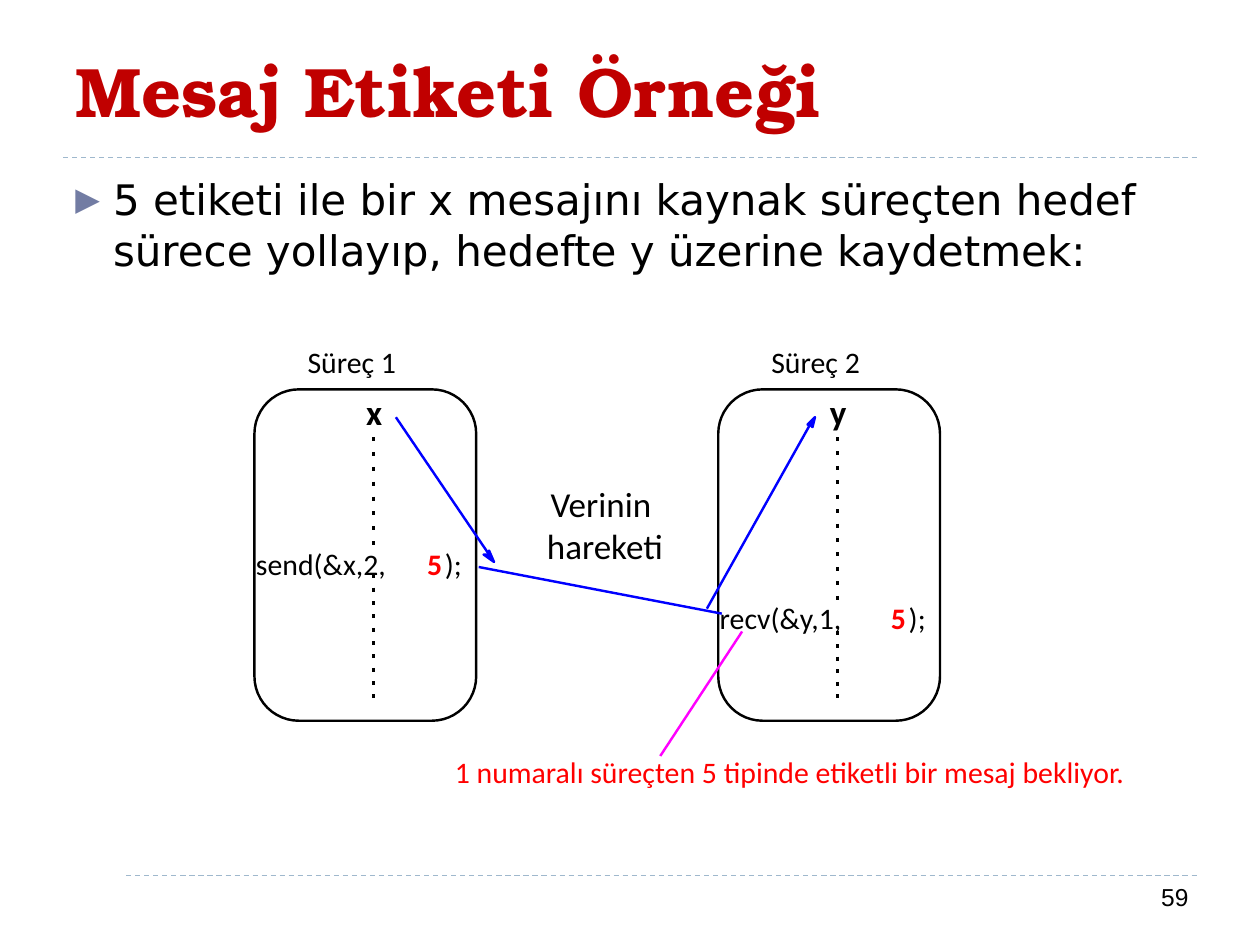
import pptx
import pptx.dml.color
import pptx.enum.dml
import pptx.enum.shapes
import pptx.enum.text
import pptx.oxml
import pptx.oxml.ns
import pptx.util

Cm = pptx.util.Cm
Align = pptx.enum.text.PP_ALIGN
Anchor = pptx.enum.text.MSO_ANCHOR
Shape = pptx.enum.shapes.MSO_SHAPE
BLACK, WHITE, RED, BLUE = "000000", "FFFFFF", "FF0000", "0000FF"
MAGENTA, CRIMSON, RULE, BULLET = "FF00FF", "C00000", "9FB8CD", "727CA3"


def color(value):
    """Turn a hex string into a colour."""
    return pptx.dml.color.RGBColor.from_string(value)


def paint(fill, value):
    """Fill with a colour, or with nothing."""
    if value:
        fill.solid()
        fill.fore_color.rgb = color(value)
    else:
        fill.background()


class Sketch:
    """Hold the style and the current slide."""

    def __init__(self, page, font="Calibri", size=17, weight=1.38):
        """Keep the page and its default style."""
        self.page = page
        self.font = font
        self.size = size
        self.weight = weight

    def text(self, words, left, top, width, height, fill=None, margin=0, wrap=False,
             align=Align.LEFT, anchor=Anchor.TOP, tint=BLACK, **formats):
        """Add a text box and return its paragraph."""
        box = self.page.shapes.add_textbox(Cm(left), Cm(top), Cm(width), Cm(height))
        if fill:
            paint(box.fill, fill)
        frame = box.text_frame
        settings = {"word_wrap": wrap, "vertical_anchor": anchor}
        if margin is not None:
            settings.update({f"margin_{side}": Cm(margin) for side in ("left", "top", "right", "bottom")})
        for name, value in settings.items():
            setattr(frame, name, value)
        para = frame.paragraphs[0]
        para.alignment = align
        formats = {"name": self.font, "size": self.size, "bold": False, **formats}
        formats["size"] = pptx.util.Pt(formats["size"])
        for index, row in enumerate(words.splitlines()):
            if index:
                para.add_line_break()
            span = para.add_run()
            span.text = row
            span.font.color.rgb = color(tint)
            for name, value in formats.items():
                setattr(span.font, name, value)
        return para

    def bullet(self, para, indent, gap):
        """Give a paragraph a triangle bullet with a hanging indent."""
        para.space_before = pptx.util.Pt(gap)
        properties = para._p.get_or_add_pPr()
        properties.set("marL", str(Cm(indent)))
        properties.set("indent", str(-Cm(indent)))
        space = pptx.oxml.ns.nsdecls("a")
        for markup in (f'<a:buClr {space}><a:srgbClr val="{BULLET}"/></a:buClr>',
                       f'<a:buSzPct {space} val="76000"/>',
                       f'<a:buFont {space} typeface="DejaVu Sans"/>',
                       f'<a:buChar {space} char="▶"/>'):
            properties.append(pptx.oxml.parse_xml(markup))

    def line(self, start, end, tint=BLACK, weight=None, dash=None):
        """Add a straight connector."""
        points = [Cm(value) for value in (*start, *end)]
        kind = pptx.enum.shapes.MSO_CONNECTOR.STRAIGHT
        connector = self.page.shapes.add_connector(kind, *points)
        connector.line.color.rgb = color(tint)
        connector.line.width = pptx.util.Pt(weight or self.weight)
        if dash:
            connector.line.dash_style = dash
        effects = f'<a:effectLst {pptx.oxml.ns.nsdecls("a")}/>'
        connector._element.spPr.append(pptx.oxml.parse_xml(effects))

    def ticks(self, x, first, last, count, length=0.08):
        """Add a column of evenly spaced short strokes."""
        step = (last - first) / (count - 1)
        for index in range(count):
            top = first + index * step
            self.line((x, top), (x, top + length))

    def finish(self, shape, fill, outline):
        """Set fill and outline and drop the shadow."""
        shape.shadow.inherit = False
        paint(shape.fill, fill)
        paint(shape.line.fill, outline)
        if outline:
            shape.line.width = pptx.util.Pt(self.weight)

    def shape(self, kind, left, top, width, height, fill=None, outline=None, corner=None):
        """Add a preset shape."""
        item = self.page.shapes.add_shape(kind, Cm(left), Cm(top), Cm(width), Cm(height))
        if corner:
            item.adjustments[0] = corner
        self.finish(item, fill, outline)

    def arrow(self, start, head):
        """Add a shaft that ends in a drawn arrowhead."""
        self.line(start, head[0], BLUE)
        points = [(Cm(x), Cm(y)) for x, y in head]
        builder = self.page.shapes.build_freeform(*points[0])
        builder.add_line_segments(points[1:], close=True)
        self.finish(builder.convert_to_shape(), BLUE, BLUE)

    def process(self, left, title, variable, call, call_top, columns):
        """Add one process with its variable, call and dotted column."""
        self.text(title, left + 1.07, 6.93, 2.08, 0.74)
        self.text(call, left + 0.03, call_top, 2.8, 0.72)
        self.text("5", left + 3.48, call_top, 0.33, 0.74, tint=RED, bold=True)
        self.text(");", left + 3.84, call_top, 0.36, 0.72)
        for column in columns:
            self.ticks(left + 2.4, *column)
        self.shape(Shape.ROUNDED_RECTANGLE, left, 7.85, 4.47, 6.68, outline=BLACK, corner=0.2)
        self.text(variable, left + 2.25, 7.87, 0.38, 0.84, size=20, bold=True)


def main():
    """Build the slide and save it."""
    deck = pptx.Presentation()
    deck.slide_width, deck.slide_height = Cm(25.4), Cm(19.05)
    sketch = Sketch(deck.slides.add_slide(deck.slide_layouts[6]))

    for y in (17.65, 3.18):
        sketch.line((1.27, y), (24.13, y), RULE, 0.75, pptx.enum.dml.MSO_LINE.DASH)
    sketch.shape(Shape.RECTANGLE, 0.89, 17.32, 1.6, 1.6, fill=WHITE)
    sketch.text("Mesaj Etiketi Örneği", 1.27, 0.43, 22.86, 2.74, margin=None, wrap=True,
                anchor=Anchor.MIDDLE, tint=CRIMSON, name="TeX Gyre Bonum", size=40, bold=True)
    sketch.text("59", 18.29, 17.65, 5.92, 1.02, margin=None, wrap=True,
                align=Align.RIGHT, name="Arial", size=14)
    body = sketch.text("5 etiketi ile bir x mesajını kaynak süreçten hedef sürece yollayıp, "
                       "hedefte y üzerine kaydetmek:", 1.27, 3.38, 22.86, 13.72,
                       margin=None, wrap=True, name="DejaVu Sans", size=24)
    sketch.bullet(body, 0.76, 12)

    sketch.process(5.13, "Süreç 1", "x", "send(&x,2,", 11,
                   [(8.81, 10.91, 8), (11.58, 14, 10)])
    sketch.process(14.48, "Süreç 2", "y", "recv(&y,1,", 12.09,
                   [(8.81, 12.01, 12), (12.73, 14, 6)])

    sketch.line((9.65, 11.43), (14.55, 12.37), BLUE)
    sketch.arrow((7.98, 8.41), [(9.86, 11.18), (9.86, 11.1), (9.96, 11.33), (9.75, 11.18)])
    sketch.arrow((14.25, 12.27), [(16.33, 8.56), (16.28, 8.56), (16.43, 8.41), (16.38, 8.61)])
    sketch.line((14.96, 12.73), (13.31, 15.24), MAGENTA)
    sketch.text("1 numaralı süreçten 5 tipinde etiketli bir mesaj bekliyor.",
                9.17, 15.19, 14.73, 0.74, tint=RED)
    sketch.text("Verinin \nhareketi", 10.39, 9.73, 3.61, 1.7, fill=WHITE, wrap=True,
                align=Align.CENTER, size=20)
    deck.save("out.pptx")


if __name__ == "__main__":
    main()
